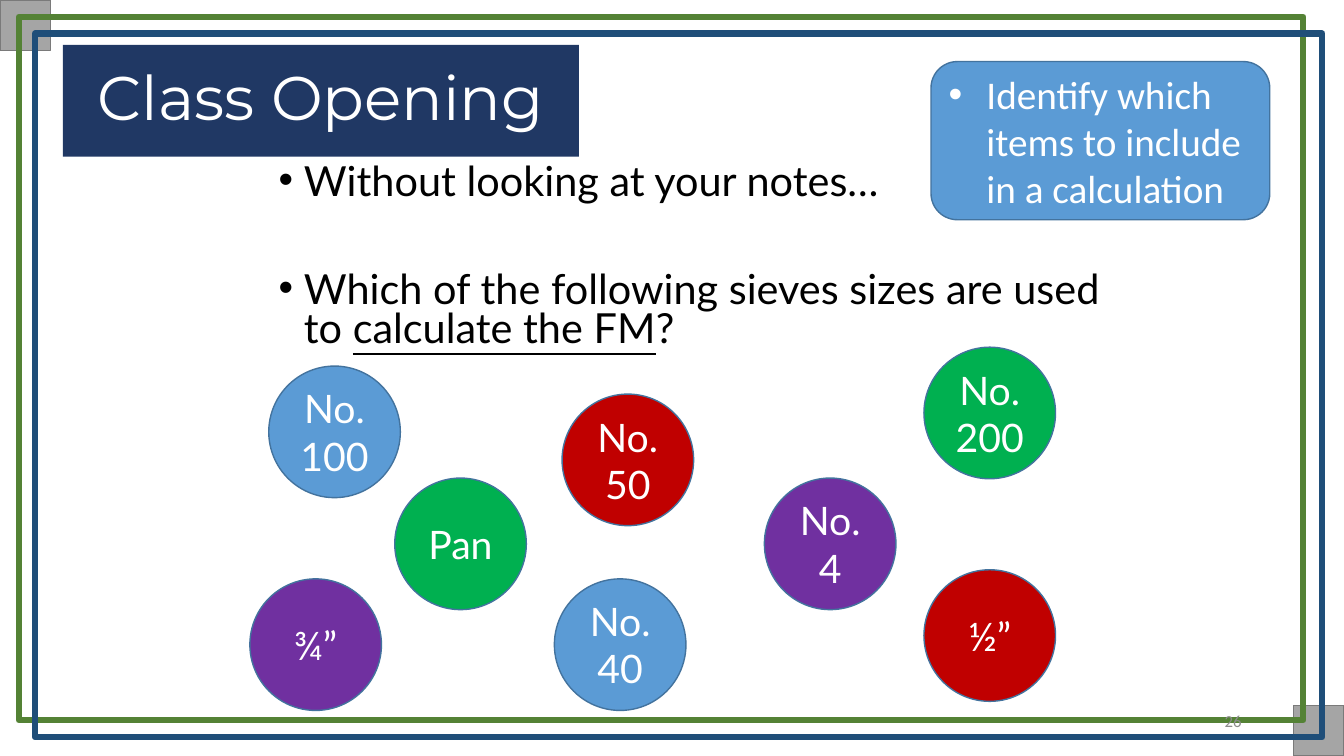
from lxml.etree import SubElement
from pptx import Presentation
from pptx.dml.color import RGBColor
from pptx.enum.shapes import MSO_SHAPE as Shape
from pptx.enum.text import MSO_ANCHOR as Anchor, PP_ALIGN as Align
from pptx.oxml.ns import qn
from pptx.util import Pt

WIDTH, HEIGHT = 960, 540
WHITE, GRAY, BLUE, EDGE = "FFFFFF", "A5A5A5", "5B9BD5", "43739E"
GREEN, RED, PURPLE = "00B050", "C00000", "7030A0"
SIEVE_SIZE = 94

# Label, fill, left and top of each sieve
SIEVES = [
    ("No. 100", BLUE, 192, 261.5),
    ("Pan", GREEN, 282, 341.5),
    ("No. 50", RED, 401.5, 281.5),
    ("No. 40", BLUE, 396, 413.5),
    ("No. 4", PURPLE, 546, 341.5),
    ("¾”", PURPLE, 178.5, 413.5),
    ("No. 200", GREEN, 660, 248),
    ("½”", RED, 660, 407),
]


def color(hex_string):
    return RGBColor.from_string(hex_string)


def add_box(page, kind, box, fill=None, line=None, weight=1):
    shape = page.shapes.add_shape(kind, *map(Pt, box))
    shape.shadow.inherit = False
    if fill:
        shape.fill.solid()
        shape.fill.fore_color.rgb = color(fill)
    else:
        shape.fill.background()
    if line:
        shape.line.color.rgb = color(line)
        shape.line.width = Pt(weight)
    else:
        shape.line.fill.background()
    return shape


def style_para(para, font, size, hex_string, align):
    para.alignment = align
    for span in para.runs:
        span.font.name = font
        span.font.size = Pt(size)
        span.font.color.rgb = color(hex_string)


def write(shape, text, font, size, hex_string=WHITE, align=Align.CENTER):
    frame = shape.text_frame
    frame.word_wrap = True
    frame.vertical_anchor = Anchor.MIDDLE
    frame.text = text
    para = frame.paragraphs[0]
    style_para(para, font, size, hex_string, align)
    return para


def add_bullet(para, indent):
    props = para._p.get_or_add_pPr()
    props.set("marL", str(Pt(indent)))
    props.set("indent", str(-Pt(indent)))
    SubElement(props, qn("a:buFont"), typeface="Arial")
    SubElement(props, qn("a:buChar"), char="•")


def draw_frame(page, box):
    left, top, width, height = box
    corner = 36
    # Gray corner squares
    for x, y in ((left, top), (left + width - corner, top + height - corner)):
        add_box(page, Shape.RECTANGLE, (x, y, corner, corner), GRAY, "7A7A7A")
    # Offset borders
    for x, y, w, line in ((13.5, 12, 917.5, "548235"), (25, 24, 919.5, "1F4E79")):
        add_box(page, Shape.RECTANGLE, (left + x, top + y, w, 502.5),
                line=line, weight=4.5)


def draw_question(page, box):
    frame = page.shapes.add_textbox(*map(Pt, box)).text_frame
    frame.word_wrap = True
    notes = frame.paragraphs[0]
    notes.text = "Without looking at your notes…"
    question = frame.add_paragraph()
    question.text = "Which of the following sieves sizes are used to "
    for text, underline in (("calculate the FM", True), ("?", False)):
        span = question.add_run()
        span.text = text
        span.font.underline = underline
    for para, before in ((notes, 10), (question, 48.5)):
        style_para(para, "Lato", 29.6, "000000", Align.LEFT)
        para.line_spacing = 0.8
        para.space_before = Pt(before)
        add_bullet(para, 18)


def draw_page_number(page, box):
    number = page.shapes.add_textbox(*map(Pt, box))
    write(number, "26", "Calibri", 12, "8C8C8C", Align.RIGHT)


def draw_sieves(page, box):
    left, top = box[:2]
    for label, fill, x, y in SIEVES:
        circle = add_box(page, Shape.ROUNDED_RECTANGLE,
                         (left + x, top + y, SIEVE_SIZE, SIEVE_SIZE), fill, EDGE)
        circle.adjustments[0] = 0.5
        write(circle, label, "Lato", 28)


def draw_title(page, box):
    banner = add_box(page, Shape.RECTANGLE, box, "203864")
    write(banner, "Class Opening", "Montserrat", 44).line_spacing = 0.9


def draw_objective(page, box):
    card = add_box(page, Shape.ROUNDED_RECTANGLE, box, BLUE, EDGE)
    para = write(card, "Identify which items to include in a calculation",
                 "Calibri", 28, align=Align.LEFT)
    add_bullet(para, 27)


def main():
    deck = Presentation()
    deck.slide_width, deck.slide_height = Pt(WIDTH), Pt(HEIGHT)
    page = deck.slides.add_slide(deck.slide_layouts[6])
    full_page = (0, 0, WIDTH, HEIGHT)
    draw_frame(page, full_page)
    draw_question(page, (192, 114, 612, 150))
    draw_page_number(page, (678, 500.5, 216, 29))
    draw_sieves(page, full_page)
    draw_title(page, (45, 32, 368.5, 80))
    draw_objective(page, (665, 44, 242, 113))
    deck.save("out.pptx")


if __name__ == "__main__":
    main()
